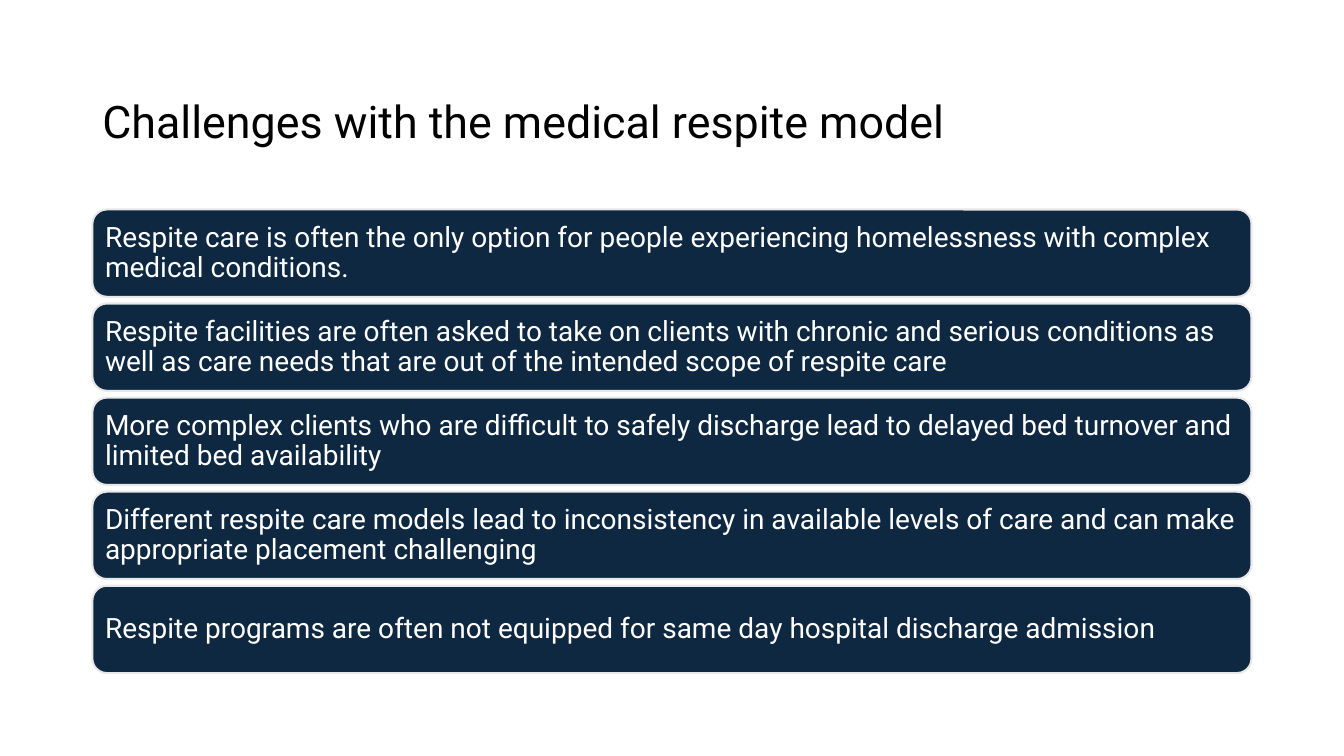
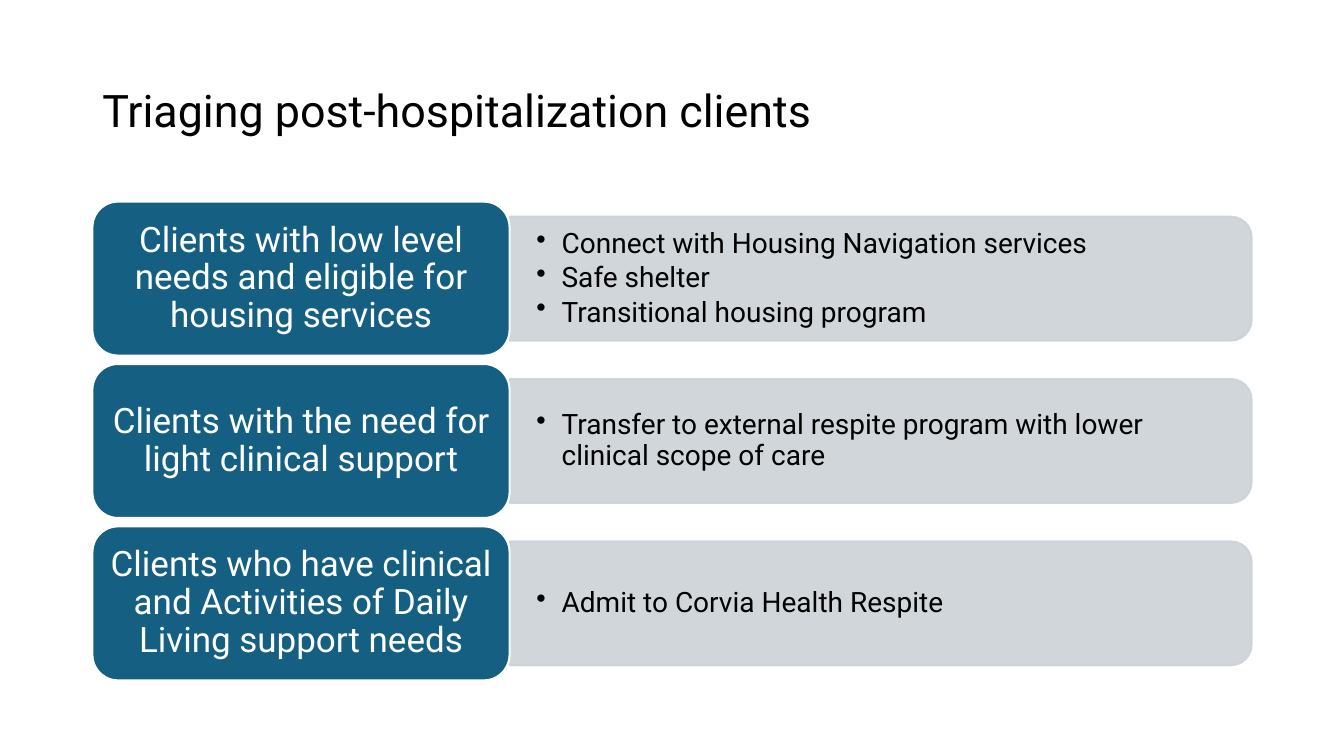
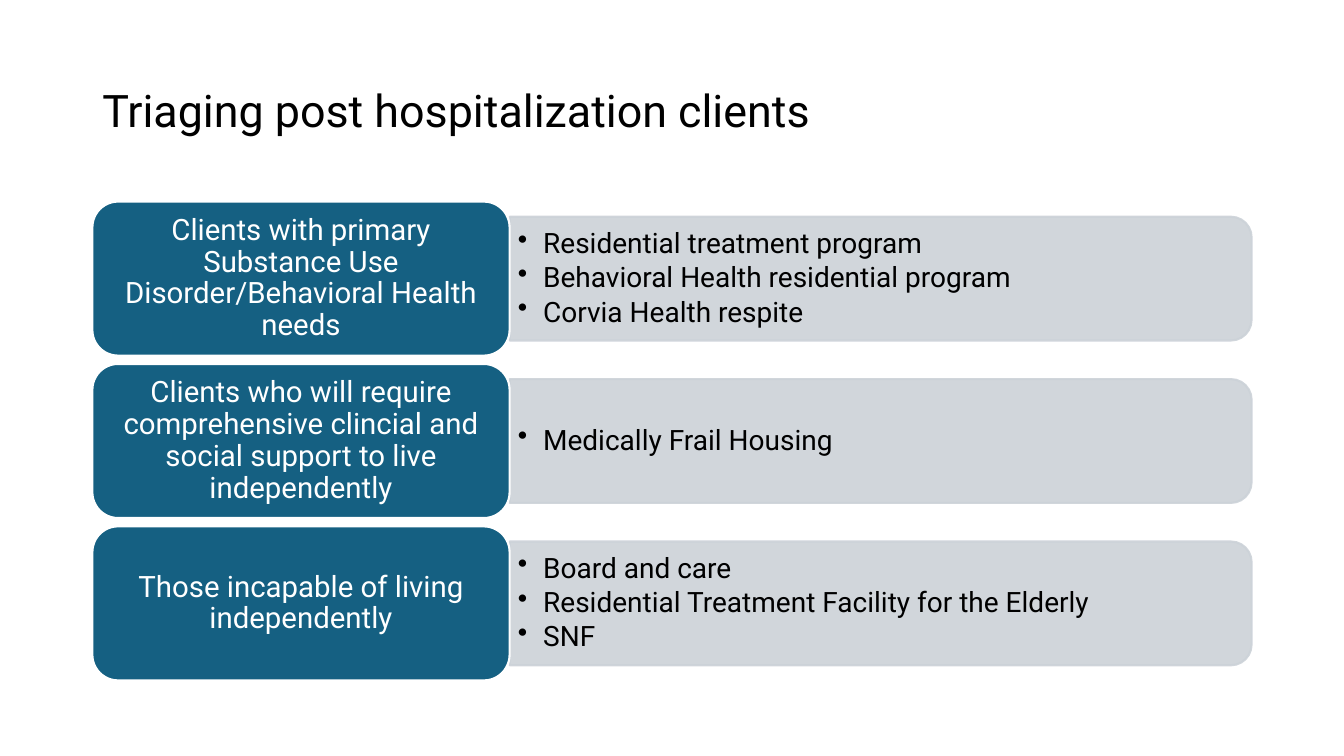
from dataclasses import dataclass

from lxml import etree
from pptx import Presentation
from pptx.dml.color import RGBColor
from pptx.enum.shapes import MSO_SHAPE
from pptx.enum.text import MSO_ANCHOR, PP_ALIGN
from pptx.oxml.ns import qn
from pptx.util import Pt

ROUND = MSO_SHAPE.ROUNDED_RECTANGLE
TAB = MSO_SHAPE.ROUND_2_SAME_RECTANGLE
MIDDLE = MSO_ANCHOR.MIDDLE
LEFT = PP_ALIGN.LEFT
CENTER = PP_ALIGN.CENTER


@dataclass(frozen=True)
class Theme:
    font: str = "Roboto"
    ink: str = "000000"
    white: str = "FFFFFF"
    navy: str = "0E2841"
    rim: str = "E8E8E8"
    teal: str = "156082"
    gray: str = "CCD2D8"
    title: float = 32
    body: float = 20
    edge: float = 1.5
    left: float = 66
    width: float = 828


THEME = Theme()


def write(shape, lines, size, color, pad, align=LEFT, dots=False):
    frame = shape.text_frame
    frame.word_wrap = True
    frame.vertical_anchor = MIDDLE
    frame.margin_left = frame.margin_right = Pt(pad[0])
    frame.margin_top = frame.margin_bottom = Pt(pad[1])
    for index, line in enumerate(lines):
        para = frame.add_paragraph() if index else frame.paragraphs[0]
        para.alignment = align
        para.line_spacing = 0.9
        if dots:
            para.space_after = Pt(3)
            props = para._p.get_or_add_pPr()
            props.set("marL", str(Pt(18)))
            props.set("indent", str(Pt(-18)))
            etree.SubElement(props, qn("a:buChar"), char="•")
        run = para.add_run()
        run.text = line
        run.font.name = THEME.font
        run.font.size = Pt(size)
        run.font.color.rgb = RGBColor.from_string(color)


def add_box(slide, kind, x, y, w, h, fill, line):
    box = slide.shapes.add_shape(kind, Pt(x), Pt(y), Pt(w), Pt(h))
    box.shadow.inherit = False
    box.fill.solid()
    box.fill.fore_color.rgb = RGBColor.from_string(fill)
    box.line.color.rgb = RGBColor.from_string(line)
    box.line.width = Pt(THEME.edge)
    return box


def add_text(slide, x, y, w, h, lines, size, pad, dots=False):
    box = slide.shapes.add_textbox(Pt(x), Pt(y), Pt(w), Pt(h))
    write(box, lines, size, THEME.ink, pad, dots=dots)


def add_slide(deck, title, top, height):
    slide = deck.slides.add_slide(deck.slide_layouts[6])
    add_text(slide, THEME.left, top, THEME.width, height, [title],
             THEME.title, (7.2, 3.6))
    return slide


def add_bars(slide, lines):
    for index, line in enumerate(lines):
        bar = add_box(slide, ROUND, THEME.left, 149.6 + 67.2 * index,
                      THEME.width, 62.4, THEME.navy, THEME.rim)
        write(bar, [line], THEME.body, THEME.white, (6, 6))


def add_panel(slide, x, mid, w, h, lines, pad):
    panel = add_box(slide, TAB, x + (w - h) / 2, mid - w / 2, h, w,
                    THEME.gray, THEME.gray)
    panel.rotation = 90
    for color in panel._element.spPr.iter(qn("a:srgbClr")):
        etree.SubElement(color, qn("a:alpha"), val="90000")
    add_text(slide, x, mid - 40, w - 4.3, 80, lines, THEME.body, pad, True)


def add_rows(slide, rows, size, label_pad, panel_pad):
    wide, high, pitch = 298, 110, 116
    for index, (label, lines) in enumerate(rows):
        top = 144 + pitch * index
        add_panel(slide, THEME.left + wide, top + high / 2,
                  THEME.width - wide, 88.4, lines, panel_pad)
        box = add_box(slide, ROUND, THEME.left, top, wide, high,
                      THEME.teal, THEME.white)
        write(box, [label], size, THEME.white, label_pad, CENTER)


def main():
    deck = Presentation()
    deck.slide_width, deck.slide_height = Pt(960), Pt(540)

    slide = add_slide(deck, "Challenges with the medical respite model", 44, 89)
    add_bars(slide, [
        "Respite care is often the only option for people experiencing "
        "homelessness with complex medical conditions.",
        "Respite facilities are often asked to take on clients with chronic "
        "and serious conditions as well as care needs that are out of the "
        "intended scope of respite care",
        "More complex clients who are difficult to safely discharge lead to "
        "delayed bed turnover and limited bed availability",
        "Different respite care models lead to inconsistency in available "
        "levels of care and can make appropriate placement challenging",
        "Respite programs are often not equipped for same day hospital "
        "discharge admission",
    ])

    slide = add_slide(deck, "Triaging post-hospitalization clients", 28.8, 104.4)
    add_rows(slide, [
        ("Clients with low level needs and eligible for housing services",
         ["Connect with Housing Navigation services", "Safe shelter",
          "Transitional housing program"]),
        ("Clients with the need for light clinical support",
         ["Transfer to external respite program with lower clinical scope "
          "of care"]),
        ("Clients who have clinical and Activities of Daily Living support "
         "needs",
         ["Admit to Corvia Health Respite"]),
    ], 25, (7.2, 3.6), (19.2, 9.6))

    slide = add_slide(deck, "Triaging post hospitalization clients", 28.8, 104.4)
    add_rows(slide, [
        ("Clients with primary Substance Use Disorder/Behavioral Health needs",
         ["Residential treatment program",
          "Behavioral Health residential program", "Corvia Health respite"]),
        ("Clients who will require comprehensive clincial and social support "
         "to live independently",
         ["Medically Frail Housing"]),
        ("Those incapable of living independently",
         ["Board and care", "Residential Treatment Facility for the Elderly",
          "SNF"]),
    ], 21, (6.3, 3.2), (6, 3))

    deck.save("out.pptx")


if __name__ == "__main__":
    main()
